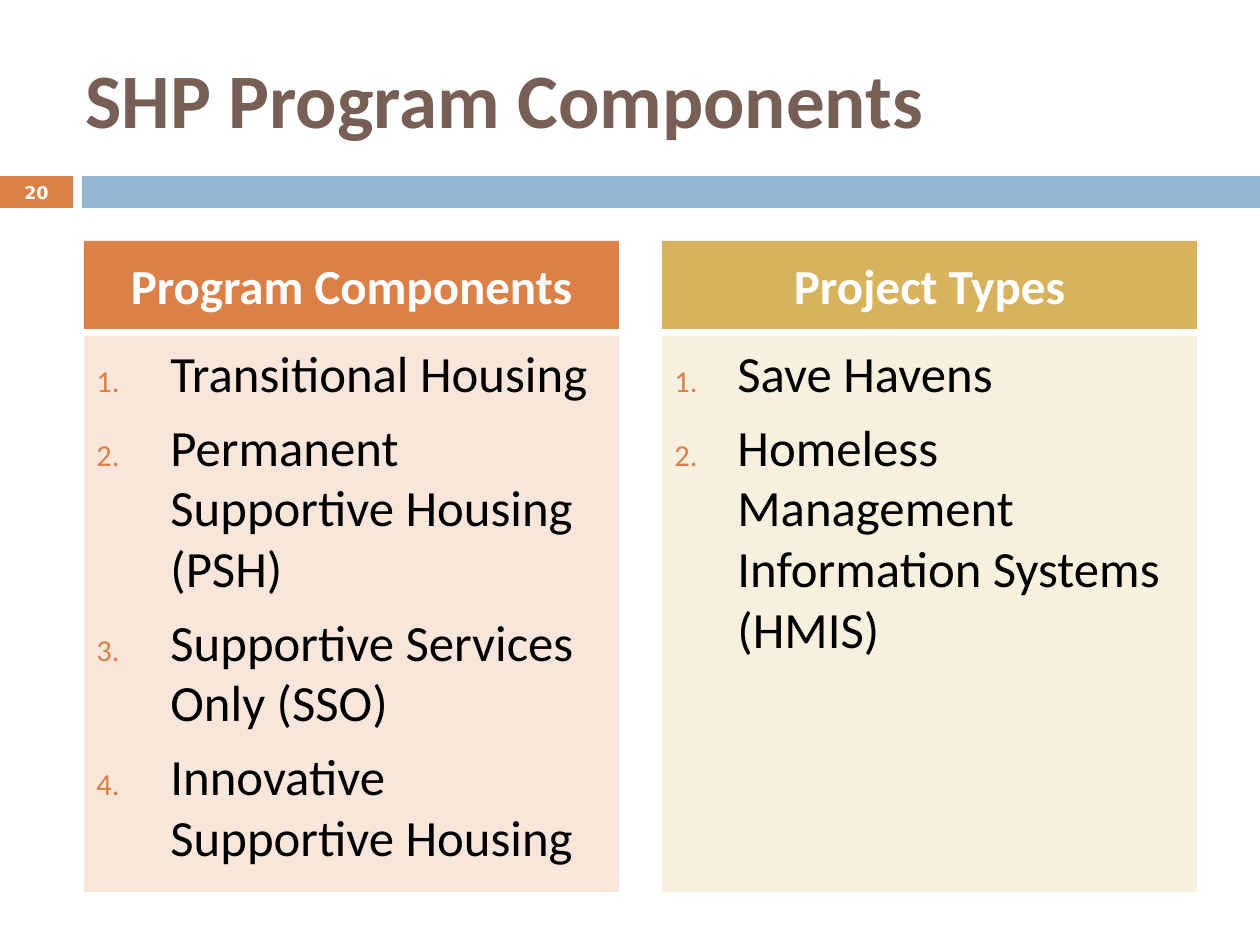
from lxml import etree
from pptx import Presentation
from pptx.dml.color import RGBColor
from pptx.enum.shapes import MSO_SHAPE
from pptx.enum.text import MSO_ANCHOR, PP_ALIGN
from pptx.oxml.ns import qn
from pptx.util import Emu, Pt

RECT = MSO_SHAPE.RECTANGLE
TOP, MIDDLE = MSO_ANCHOR.TOP, MSO_ANCHOR.MIDDLE
LEFT, CENTER = PP_ALIGN.LEFT, PP_ALIGN.CENTER

TITLE = "SHP Program Components"
PAGE_NUMBER = "20"
COLUMNS = [
    {"heading": "Program Components", "accent": "DD8047", "tint": "F8E6DA", "indent": 74,
     "items": ["Transitional Housing", "Permanent Supportive Housing (PSH)",
               "Supportive Services Only (SSO)", "Innovative Supportive Housing"]},
    {"heading": "Project Types", "accent": "D8B25C", "tint": "F7F0DE", "indent": 63,
     "items": ["Save Havens", "Homeless Management Information Systems (HMIS)"]},
]
ORANGE, BLUE, BROWN, WHITE, BLACK = "DD8047", "94B6D2", "775F55", "FFFFFF", "000000"

SLIDE_W, SLIDE_H = 1260, 945
COLUMN_LEFT, COLUMN_W, COLUMN_GAP = 84, 535, 43
HEADING_TOP, HEADING_H = 241, 88
LIST_TOP, LIST_H = 336, 556
BAND_TOP, BAND_H = 176, 32
NUMBER_W, BAND_LEFT = 73, 82


def px(length):
    return Emu(round(length * 914400 / 126))


def color(value):
    return RGBColor.from_string(value)


def add_box(slide, left, top, width, height, fill):
    box = slide.shapes.add_shape(RECT, px(left), px(top), px(width), px(height))
    box.shadow.inherit = False
    box.fill.solid()
    box.fill.fore_color.rgb = color(fill)
    box.line.fill.background()
    return box


def write(shape, texts, size, ink, bold=False, font="Calibri", align=LEFT, anchor=MIDDLE, before=0):
    frame = shape.text_frame
    frame.word_wrap = True
    frame.vertical_anchor = anchor
    for index, text in enumerate(texts):
        paragraph = frame.add_paragraph() if index else frame.paragraphs[0]
        paragraph.text = text
        paragraph.alignment = align
        paragraph.space_before = Pt(before)
        paragraph.font.size = Pt(size)
        paragraph.font.name = font
        paragraph.font.bold = bold
        paragraph.font.color.rgb = color(ink)
    return frame.paragraphs


def number(paragraph, indent):
    properties = paragraph._p.get_or_add_pPr()
    properties.set("marL", str(px(indent)))
    properties.set("indent", str(-px(indent)))
    bullet_color = etree.Element(qn("a:buClr"))
    etree.SubElement(bullet_color, qn("a:srgbClr"), val=ORANGE)
    bullet_size = etree.Element(qn("a:buSzPct"), val="60000")
    bullet_style = etree.Element(qn("a:buAutoNum"), type="arabicPeriod")
    position = properties.index(properties.find(qn("a:spcBef"))) + 1
    properties[position:position] = [bullet_color, bullet_size, bullet_style]


def main():
    deck = Presentation()
    deck.slide_width, deck.slide_height = px(SLIDE_W), px(SLIDE_H)
    slide = deck.slides.add_slide(deck.slide_layouts[6])

    page = add_box(slide, 0, BAND_TOP, NUMBER_W, BAND_H, ORANGE)
    page.text_frame.margin_left = page.text_frame.margin_right = 0
    write(page, [PAGE_NUMBER], 10, WHITE, bold=True, font="DejaVu Sans", align=CENTER)
    add_box(slide, BAND_LEFT, BAND_TOP, SLIDE_W - BAND_LEFT, BAND_H, BLUE)

    title = slide.shapes.add_textbox(px(NUMBER_W), px(38), px(1124), px(120))
    write(title, [TITLE], 44, BROWN, bold=True)

    for index, column in enumerate(COLUMNS):
        left = COLUMN_LEFT + index * (COLUMN_W + COLUMN_GAP)
        items = add_box(slide, left, LIST_TOP, COLUMN_W, LIST_H, column["tint"])
        for item in write(items, column["items"], 29, BLACK, anchor=TOP, before=7):
            number(item, column["indent"])
        heading = add_box(slide, left, HEADING_TOP, COLUMN_W, HEADING_H, column["accent"])
        write(heading, [column["heading"]], 28, WHITE, bold=True, align=CENTER, before=7)

    deck.save("out.pptx")


if __name__ == "__main__":
    main()
